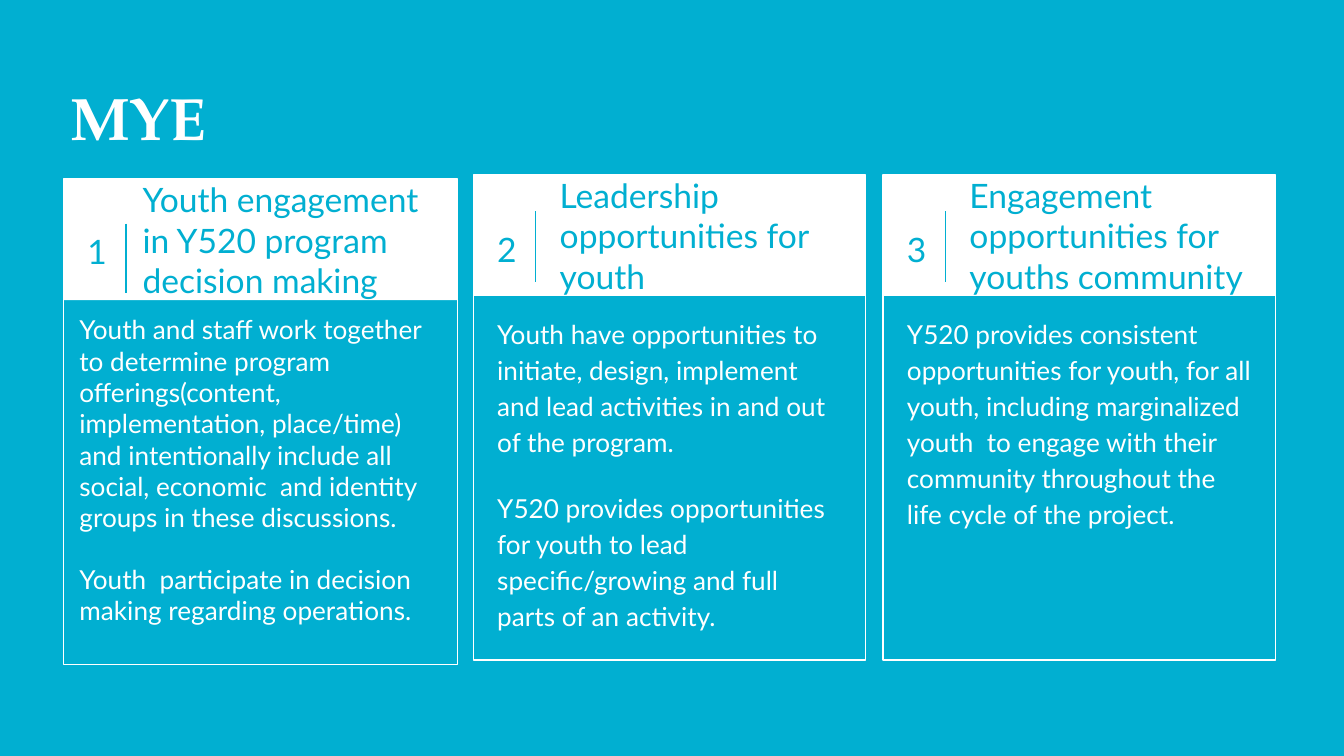
"""Build the MYE slide: three numbered cards on a cyan background."""
from lxml.etree import SubElement
from pptx import Presentation
from pptx.dml.color import RGBColor
from pptx.enum.shapes import MSO_CONNECTOR as CONN, MSO_SHAPE as SHAPE
from pptx.enum.text import MSO_ANCHOR as ANCHOR, PP_ALIGN as ALIGN
from pptx.oxml.ns import qn
from pptx.util import Pt

CYAN = RGBColor(0x01, 0xAF, 0xD1)
WHITE = RGBColor(0xFF, 0xFF, 0xFF)

CARDS = [
    dict(title="Youth engagement in Y520 program decision making",
         body=["Youth and staff work together to determine program offerings(content, "
               "implementation, place/time) and intentionally include all social, "
               "economic  and identity groups in these discussions.",
               "Youth  participate in decision making regarding operations."],
         top=96, width=211, number=(0, 74.2), rule=(23.8, 61.2),
         title_dx=35.3, body_dx=1.5, spacing=1.0),
    dict(title="Leadership opportunities for youth",
         body=["Youth have opportunities to initiate, design, implement and lead "
               "activities in and out of the program.",
               "Y520 provides opportunities for youth to lead specific/growing and "
               "full  parts of an activity."]),
    dict(title="Engagement opportunities for youths community",
         body=["Y520 provides consistent opportunities for youth, for all youth, "
               "including marginalized youth  to engage with their community "
               "throughout the life cycle of the project."]),
]


class Deck:
    """Hold the style and the current slide."""
    font = "Lato"
    title_font = "TeX Gyre Pagella"
    inset = Pt(7.2)
    line = Pt(0.75)

    def __init__(self, width, height):
        self.prs = Presentation()
        self.prs.slide_width, self.prs.slide_height = Pt(width), Pt(height)
        self.slide = self.prs.slides.add_slide(self.prs.slide_layouts[6])
        bg = self.slide.background.fill
        bg.solid()
        bg.fore_color.rgb = CYAN

    def box(self, x, y, w, h, fill=None, line=None):
        sp = self.slide.shapes.add_shape(SHAPE.RECTANGLE, Pt(x), Pt(y), Pt(w), Pt(h))
        sp.shadow.inherit = False
        if fill is None:
            sp.fill.background()
        else:
            sp.fill.solid()
            sp.fill.fore_color.rgb = fill
        if line is None:
            sp.line.fill.background()
        else:
            sp.line.color.rgb = line
            sp.line.width = self.line

    def rule(self, x, y1, y2):
        cx = self.slide.shapes.add_connector(CONN.STRAIGHT, Pt(x), Pt(y1), Pt(x), Pt(y2))
        cx.line.fill.solid()
        cx.line.fill.fore_color.rgb = CYAN
        cx.line.width = self.line
        SubElement(cx._element.spPr, qn("a:effectLst"))

    def text(self, x, y, w, h, paragraphs, size, color, font=None, bold=False,
             anchor=ANCHOR.TOP, align=ALIGN.LEFT, spacing=1.0):
        tf = self.slide.shapes.add_textbox(Pt(x), Pt(y), Pt(w), Pt(h)).text_frame
        tf.word_wrap = True
        tf.vertical_anchor = anchor
        tf.margin_left = tf.margin_right = tf.margin_top = tf.margin_bottom = self.inset
        for i, line in enumerate(paragraphs):
            p = tf.add_paragraph() if i else tf.paragraphs[0]
            p.alignment = align
            p.line_spacing = spacing
            p.space_before = Pt(16 if i else 0)
            r = p.add_run()
            r.text = line
            r.font.name = font or self.font
            r.font.size = Pt(size)
            r.font.bold = bold
            r.font.color.rgb = color

    def card(self, n, x, title, body, top=93.7, width=210.2, number=(5.8, 64.8),
             rule=(19.4, 57.6), title_dx=39.3, body_dx=5.8, spacing=1.15):
        head = 64.8
        self.box(x, top, width, 260, line=WHITE)
        self.box(x, top, width, head, fill=WHITE)
        self.text(x + 4.3, top + number[0], 27.4, number[1], [str(n)], 18, CYAN,
                  anchor=ANCHOR.MIDDLE, align=ALIGN.CENTER, spacing=1.15)
        self.rule(x + 33.5, top + rule[0], top + rule[1])
        self.text(x + title_dx, top, 165.6, head, [title], 18, CYAN, anchor=ANCHOR.MIDDLE)
        self.text(x + body_dx, 160.8, 199.4, 187.2, body, 14, WHITE, spacing=spacing)


def main():
    deck = Deck(720, 405)
    deck.text(30.5, 36, 658.8, 54, ["MYE"], 32, WHITE, font=deck.title_font, bold=True)
    for i, card in enumerate(CARDS):
        deck.card(i + 1, 34 + 219.5 * i, **card)
    deck.prs.save("out.pptx")


if __name__ == "__main__":
    main()
